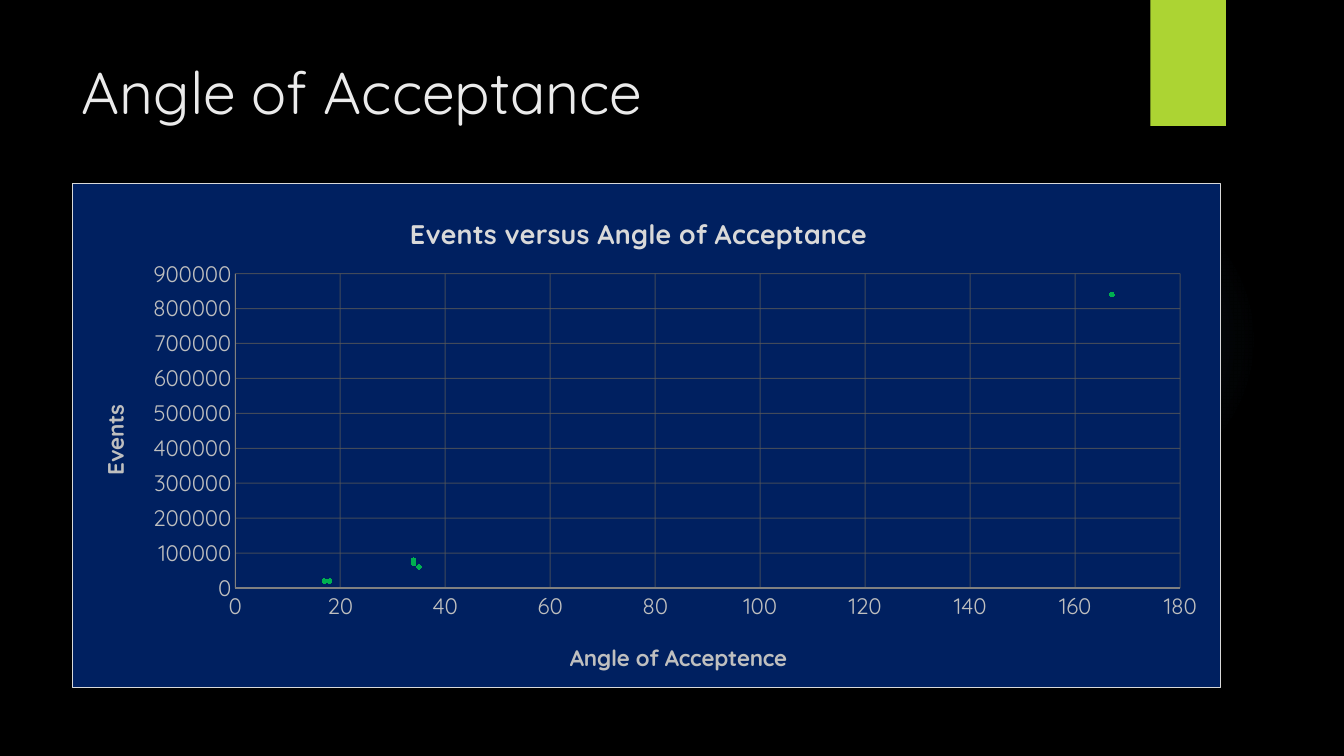
from lxml import etree
from pptx import Presentation
from pptx import util as u
from pptx.chart.data import XyChartData
from pptx.dml.color import RGBColor
from pptx.enum import chart as ch, shapes, text
from pptx.oxml import parse_xml
from pptx.oxml.ns import nsdecls, qn

FONT = "Quicksand"
POINTS = [(35, 60000), (18, 20000), (17, 20000), (34, 80000),
          (34, 70000), (167, 840000), (17, 20000)]


def rgb(value):
    return RGBColor.from_string(value)


def format_font(font, size, color, bold=False):
    font.name, font.size, font.bold = FONT, u.Pt(size), bold
    font.color.rgb = rgb(color)


def write_text(tf, content, **fmt):
    p = tf.paragraphs[0]
    r = p.add_run()
    r.text = content
    format_font(r.font, **fmt)


def set_line(line, color):
    line.color.rgb = rgb(color)
    line.width = u.Pt(0.75)


def add_plain_shape(slide, kind, box):
    sp = slide.shapes.add_shape(kind, *map(u.Inches, box))
    sp.shadow.inherit = False
    sp.line.fill.background()
    return sp


def add_glow(slide, box):
    sp = add_plain_shape(slide, shapes.MSO_SHAPE.OVAL, box)
    stops = "".join(
        f'<a:gs pos="{pos * 1000}"><a:srgbClr val="7AC4F0">'
        f'<a:alpha val="{alpha * 1000}"/></a:srgbClr></a:gs>'
        for pos, alpha in [(0, 7), (36, 6), (69, 0)])
    grad = parse_xml(
        f'<a:gradFill {nsdecls("a")}><a:gsLst>{stops}</a:gsLst>'
        '<a:path path="circle"><a:fillToRect l="50000" t="50000" '
        'r="50000" b="50000"/></a:path></a:gradFill>')
    sp._element.spPr.find(qn("a:prstGeom")).addnext(grad)


def add_tab(slide, box):
    sp = add_plain_shape(slide, shapes.MSO_SHAPE.RECTANGLE, box)
    sp.fill.solid()
    sp.fill.fore_color.rgb = rgb("ACD433")
    effects = sp._element.spPr.find(qn("a:effectLst"))
    effects.append(parse_xml(
        f'<a:outerShdw {nsdecls("a")} blurRad="38100" dist="25400" '
        'dir="5400000" rotWithShape="0"><a:srgbClr val="000000">'
        '<a:alpha val="45000"/></a:srgbClr></a:outerShdw>'))


def add_title(slide, box, content):
    sp = slide.shapes.title
    sp.left, sp.top, sp.width, sp.height = map(u.Inches, box)
    tf = sp.text_frame
    tf.word_wrap = True
    tf.auto_size = text.MSO_AUTO_SIZE.NONE
    tf.vertical_anchor = text.MSO_ANCHOR.TOP
    write_text(tf, content, size=42, color="EBEBEB")
    tf.paragraphs[0].alignment = text.PP_ALIGN.LEFT


def manual_layout(inner=False, **fractions):
    target = '<c:layoutTarget val="inner"/>' if inner else ""
    modes = "".join(f'<c:{k}Mode val="edge"/>' for k in "xy")
    values = "".join(f'<c:{k} val="{v}"/>' for k, v in fractions.items())
    return parse_xml(f'<c:layout {nsdecls("c")}><c:manualLayout>{target}'
                     f'{modes}{values}</c:manualLayout></c:layout>')


def place_heading(heading, content, x, y, **fmt):
    write_text(heading.text_frame, content, bold=True, **fmt)
    el = heading._element
    for old in el.findall(qn("c:layout")):
        el.remove(old)
    el.find(qn("c:tx")).addnext(manual_layout(x=x, y=y))


def format_axis(axis, name, top, step, x, y):
    axis.minimum_scale, axis.maximum_scale, axis.major_unit = 0, top, step
    axis.major_tick_mark = axis.minor_tick_mark = ch.XL_TICK_MARK.NONE
    axis.tick_labels.number_format = "General"
    axis.tick_labels.number_format_is_linked = False
    format_font(axis.tick_labels.font, 16, "BFBFBF")
    set_line(axis.format.line, "808080")
    axis.has_major_gridlines = True
    grid = axis.major_gridlines
    set_line(grid.format.line, "595959")
    for clr in axis._element.find(qn("c:majorGridlines")).iter(qn("a:srgbClr")):
        etree.SubElement(clr, qn("a:alpha")).set("val", "75000")
    axis.has_title = True
    place_heading(axis.axis_title, name, x, y, size=16, color="BFBFBF")


def fill_chart_area(chart):
    area = parse_xml(
        f'<c:spPr {nsdecls("c", "a")}><a:solidFill><a:srgbClr val="002060"/>'
        '</a:solidFill><a:ln w="9525"><a:solidFill><a:srgbClr val="D9D9D9"/>'
        '</a:solidFill></a:ln></c:spPr>')
    chart._chartSpace.find(qn("c:chart")).addnext(area)


def add_scatter(slide, box):
    data = XyChartData()
    events = data.add_series("Series 1")
    for angle, count in POINTS:
        events.add_data_point(angle, count)
    chart = slide.shapes.add_chart(
        ch.XL_CHART_TYPE.XY_SCATTER, *map(u.Inches, box), data).chart
    format_font(chart.font, 16, "FFFFFF")
    chart.has_legend = False
    chart.has_title = True
    place_heading(chart.chart_title, "Events versus Angle of Acceptance",
                  0.29, 0.05, size=19.2, color="D9D9D9")
    format_axis(chart.category_axis, "Angle of Acceptence", 180, 20, 0.43, 0.9)
    format_axis(chart.value_axis, "Events", 900000, 100000, 0.02, 0.43)
    fill_chart_area(chart)

    plot = chart.plots[0]
    plot.vary_by_categories = False
    series = plot.series[0]
    series.smooth = False
    series.format.line.fill.background()
    marker = series.marker
    marker.style, marker.size = ch.XL_MARKER_STYLE.CIRCLE, 3
    marker.format.fill.solid()
    marker.format.fill.fore_color.rgb = rgb("00B050")
    set_line(marker.format.line, "00B050")

    area = chart._chartSpace.find(qn("c:chart")).find(qn("c:plotArea"))
    for old in area.findall(qn("c:layout")):
        area.remove(old)
    area.insert(0, manual_layout(inner=True, x=0.142, y=0.178, w=0.823, h=0.624))


def main():
    prs = Presentation()
    prs.slide_width, prs.slide_height = u.Inches(13.33), u.Inches(7.5)
    slide = prs.slides.add_slide(prs.slide_layouts[5])
    slide.background.fill.solid()
    slide.background.fill.fore_color.rgb = rgb("000000")
    add_glow(slide, (9.41, 1.83, 3.08, 3.08))
    add_tab(slide, (11.41, 0, 0.75, 1.25))
    add_title(slide, (0.71, 0.5, 10.29, 1.53), "Angle of Acceptance")
    add_scatter(slide, (0.71, 1.82, 11.4, 5.01))
    prs.save("out.pptx")


if __name__ == "__main__":
    main()
